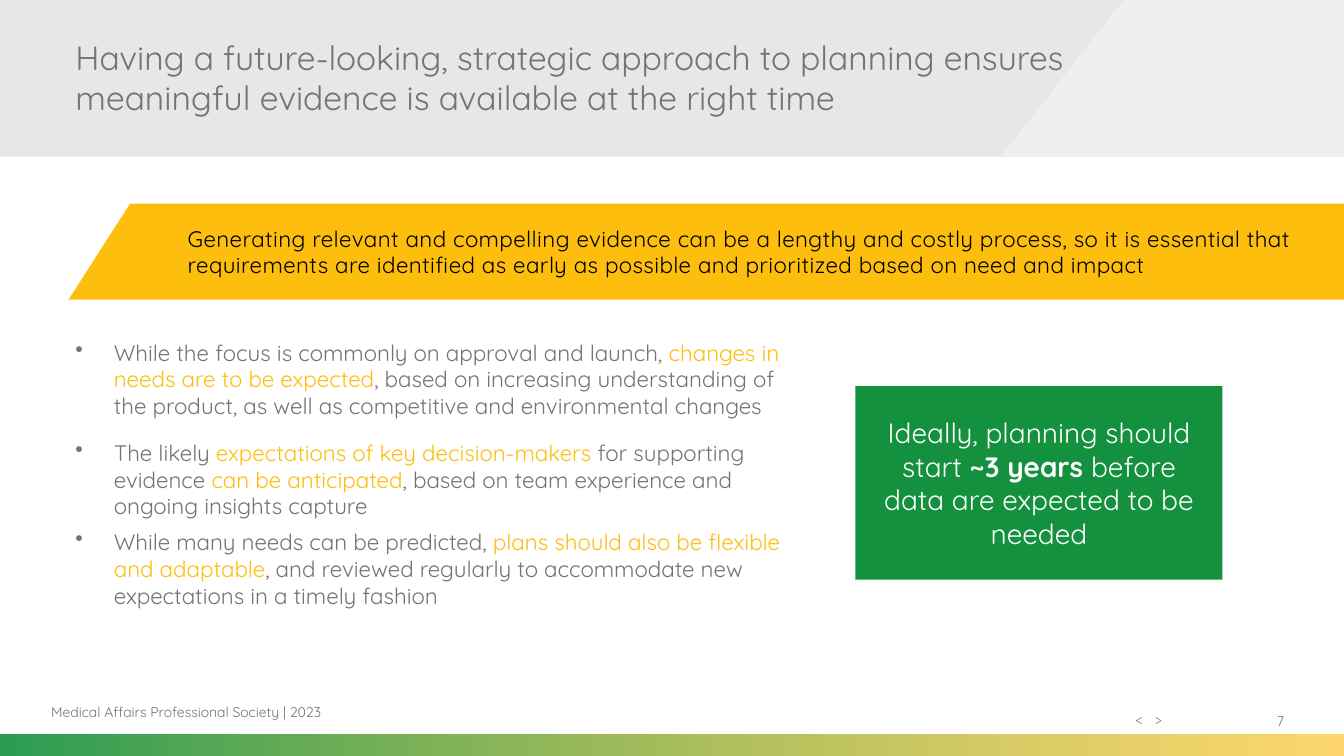
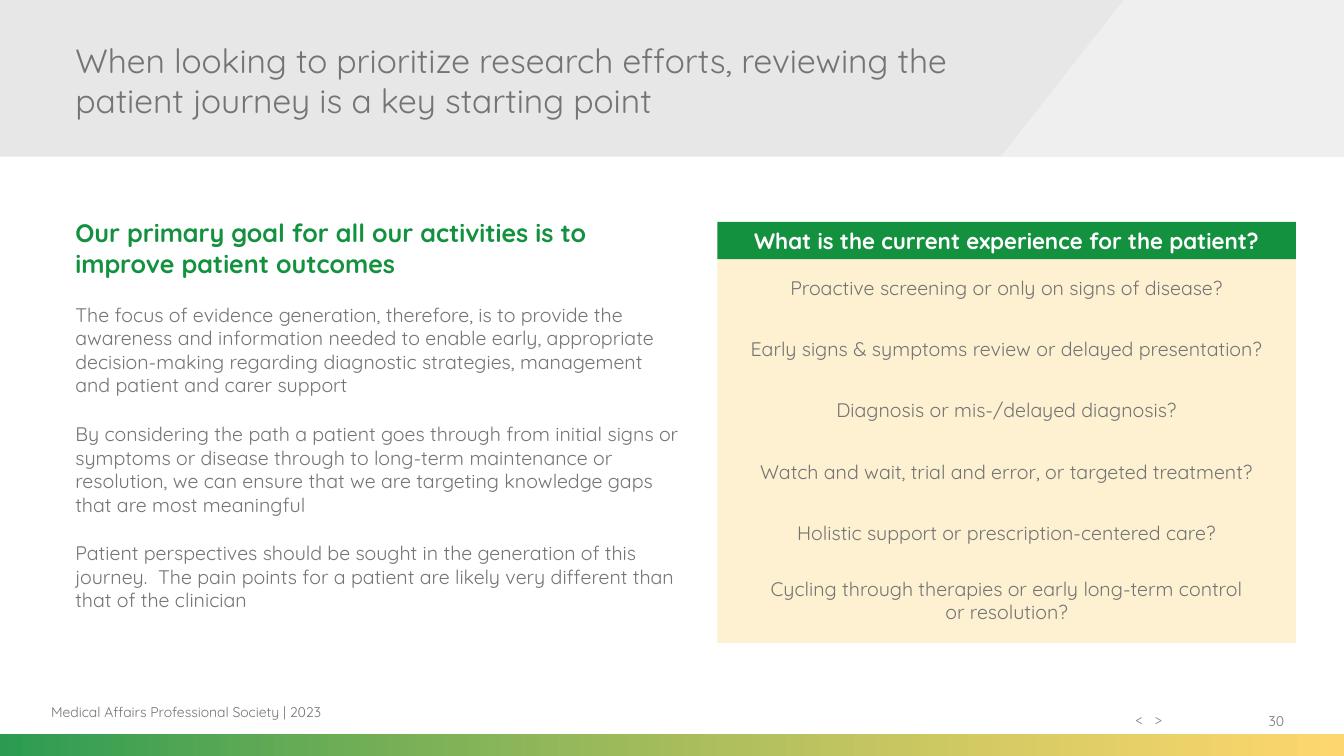
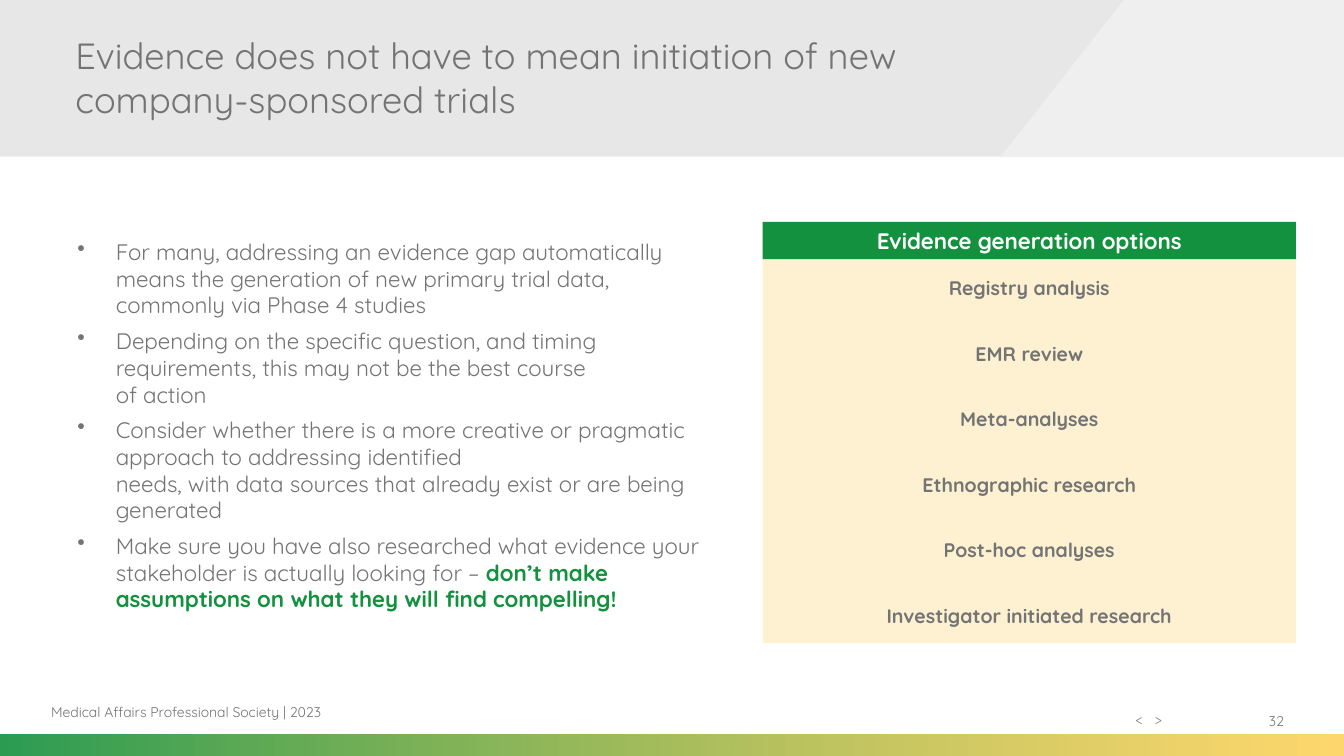
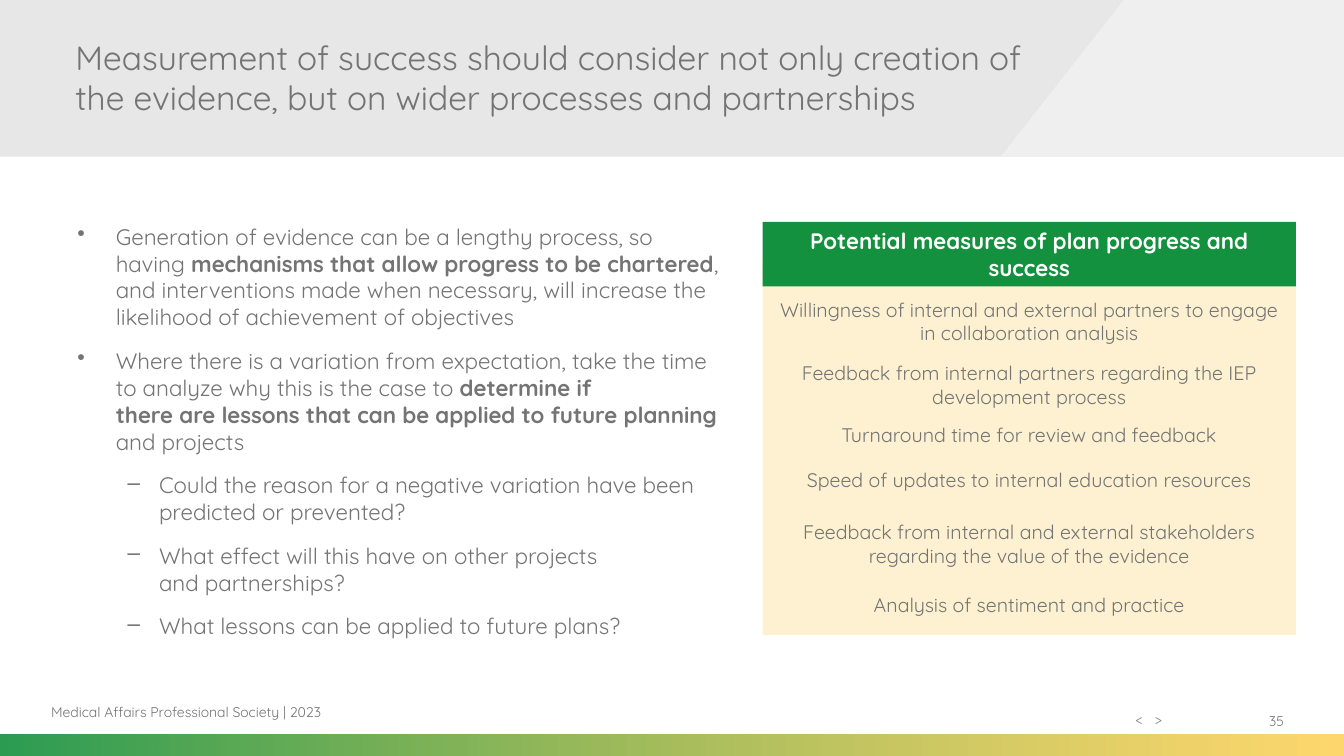
from copy import deepcopy
from dataclasses import dataclass
from typing import NamedTuple

from lxml.etree import SubElement
from pptx import Presentation
from pptx.dml.color import RGBColor
from pptx.enum.shapes import MSO_SHAPE
from pptx.enum.text import MSO_ANCHOR, PP_ALIGN
from pptx.oxml.ns import qn
from pptx.util import Cm, Pt

FONT = "Quicksand"
WIDE, HIGH = 33.87, 19.05
GREY, GREEN, GOLD, CREAM = "747474", "13913F", "FEBE0D", "FDF1D1"
WHITE, BLACK = "FFFFFF", "000000"
OWNER = "Medical Affairs Professional Society | 2023"


class Box(NamedTuple):
    left: float
    top: float
    width: float
    height: float


class Run(NamedTuple):
    text: str
    color: str = GREY
    bold: bool = False
    track: int = 0


@dataclass
class Para:
    runs: list[Run]
    before: float = 0
    after: float = 0
    mark: str = ""
    margin: float = 0
    hang: float = 0
    tab: float = 0


@dataclass
class Panel:
    left: float
    width: float
    head: str
    deep: float
    floor: float
    items: list[str]
    tops: list[float]
    bold: bool = False


def tint(color: str) -> RGBColor:
    return RGBColor.from_string(color)


def bullet(*runs: Run, after: float = 0) -> Para:
    return Para(list(runs), 6, after, "•", 0.97, 0.97)


def dash(text: str) -> Para:
    return Para([Run(text)], 6, 6, "–", 2.06, 0.79)


def plain(text: str, color: str = GREY, bold: bool = False) -> Para:
    return Para([Run(text, color, bold)])


def fade(shape, *rates: int) -> None:
    colors = list(shape._element.spPr.iter(qn("a:srgbClr")))
    for color, rate in zip(colors, rates):
        SubElement(color, qn("a:alpha"), val=str(rate * 1000))


def dress(shape, color: str):
    shape.shadow.inherit = False
    shape.line.fill.background()
    shape.fill.solid()
    shape.fill.fore_color.rgb = tint(color)
    return shape


def block(slide, box: Box, color: str):
    shape = slide.shapes.add_shape(MSO_SHAPE.RECTANGLE, *map(Cm, box))
    return dress(shape, color)


def shard(slide, dots: list[tuple[float, float]], color: str):
    first, *rest = [(Cm(x), Cm(y)) for x, y in dots]
    build = slide.shapes.build_freeform(*first)
    build.add_line_segments(rest)
    return dress(build.convert_to_shape(), color)


def add_run(line, run: Run, size: float) -> None:
    for index, part in enumerate(run.text.split("\n")):
        if index:
            line.add_line_break()
            line._p[-1].append(deepcopy(line.runs[-1]._r.rPr))
        piece = line.add_run()
        piece.text = part
        font = piece.font
        font.name, font.size, font.bold = FONT, Pt(size), run.bold
        font.color.rgb = tint(run.color)
        if run.track:
            piece._r.rPr.set("spc", str(run.track))


def write(shape, paras: list[Para], size: float, align=PP_ALIGN.LEFT,
          anchor=MSO_ANCHOR.MIDDLE) -> None:
    frame = shape.text_frame
    frame.word_wrap = True
    frame.vertical_anchor = anchor
    for index, para in enumerate(paras):
        line = frame.add_paragraph() if index else frame.paragraphs[0]
        line.alignment = align
        props = line._p.get_or_add_pPr()
        if para.mark:
            props.set("marL", str(Cm(para.margin)))
            props.set("indent", str(-Cm(para.hang)))
            SubElement(props, qn("a:buChar"), char=para.mark)
        if para.tab:
            tabs = SubElement(props, qn("a:tabLst"))
            SubElement(tabs, qn("a:tab"), pos=str(Cm(para.tab)), algn="l")
        line.space_before = Pt(para.before if index else 0)
        line.space_after = Pt(para.after)
        for run in para.runs:
            add_run(line, run, size)


def label(slide, box: Box, paras: list[Para], size: float,
          align=PP_ALIGN.LEFT, anchor=MSO_ANCHOR.MIDDLE) -> None:
    write(slide.shapes.add_textbox(*map(Cm, box)), paras, size, align, anchor)


def body(slide, box: Box, paras: list[Para], size: float = 16) -> None:
    label(slide, box, paras, size, anchor=MSO_ANCHOR.TOP)


def start(deck, title: str, page: int, size: float = 24, top: float = 0):
    slide = deck.slides.add_slide(deck.slide_layouts[6])
    fade(block(slide, Box(0, 0, WIDE, 3.95), "D9D9D9"), 62)
    slant = [(28.32, 0), (WIDE, 0), (WIDE, 3.95), (25.22, 3.95)]
    fade(shard(slide, slant, "F2F2F2"), 79)
    strip = block(slide, Box(0, 18.51, WIDE, HIGH - 18.51), GREEN)
    strip.fill.gradient()
    strip.fill.gradient_angle = 0
    for stop, color in zip(strip.fill.gradient_stops, (GREEN, GOLD)):
        stop.color.rgb = tint(color)
    fade(strip, 90, 60)
    label(slide, Box(30.3, 17.65, 2.31, 1.02), [plain(str(page))], 10, PP_ALIGN.RIGHT)
    arrows = Para([Run("<\t>", "808080")], tab=0.48)
    label(slide, Box(28.37, 17.78, 1.78, 0.69), [arrows], 10)
    label(slide, Box(1.04, 17.42, 10.72, 1.02), [plain(OWNER)], 10)
    label(slide, Box(1.65, top, 25.4, 3.89), [plain(title)], size)
    return slide


def draw(slide, panel: Panel) -> None:
    left, width = panel.left, panel.width
    block(slide, Box(left, 6.5, width, panel.floor - 6.5), CREAM)
    head = block(slide, Box(left, 5.59, width, panel.deep), GREEN)
    write(head, [plain(panel.head, WHITE, True)], 16, PP_ALIGN.CENTER)
    for item, top in zip(panel.items, panel.tops):
        line = plain(item, bold=panel.bold)
        label(slide, Box(left, top, width, 1.45), [line], 14, PP_ALIGN.CENTER)


def plan(deck) -> None:
    slide = start(deck, "Having a future-looking, strategic approach to planning ensures "
                  "meaningful evidence is available at the right time", 7)
    body(slide, Box(1.65, 8.41, 18.62, 7.82), [
        bullet(Run("While the focus is commonly on approval and launch, "),
               Run("changes in needs are to be expected", GOLD),
               Run(", based on increasing understanding of the product, as well as "
                   "competitive and environmental changes"), after=8),
        bullet(Run("The likely "),
               Run("expectations of key decision-makers ", GOLD),
               Run("for supporting evidence "),
               Run("can be anticipated", GOLD),
               Run(", based on team experience and ongoing insights capture")),
        bullet(Run("While many needs can be predicted, "),
               Run("plans should also be flexible and adaptable", GOLD),
               Run(", and reviewed regularly to accommodate new expectations in a "
                   "timely fashion"), after=8),
    ])
    card = block(slide, Box(21.56, 9.73, 9.25, 4.88), GREEN)
    card.text_frame.margin_left = card.text_frame.margin_right = Cm(0.41)
    write(card, [Para([Run("Ideally, planning should start ", WHITE),
                       Run("~3 years ", WHITE, True),
                       Run("before data are expected to be needed", WHITE)])],
          20, PP_ALIGN.CENTER)
    edge = [(3.28, 5.13), (WIDE, 5.13), (WIDE, 7.55), (1.73, 7.55)]
    banner = shard(slide, edge, GOLD)
    banner.text_frame.margin_left = Cm(3)
    write(banner, [Para([Run(
        "Generating relevant and compelling evidence can be a lengthy and costly process, "
        "so it is essential that requirements are identified as early as possible and "
        "prioritized based on need and impact", BLACK, track=30)])], 16)


def journey(deck) -> None:
    slide = start(deck, "When looking to prioritize research efforts, reviewing the patient "
                  "journey is a key starting point", 30, top=0.08)
    goal = "Our primary goal for all our activities is to improve patient outcomes"
    box = Box(1.65, 5.36, 15.75, 1.85)
    body(slide, box, [plain(goal, GREEN, True)], 18)
    texts = [
        "The focus of evidence generation, therefore, is to provide the awareness and "
        "information needed to enable early, appropriate decision-making regarding "
        "diagnostic strategies, management and patient and carer support",
        "By considering the path a patient goes through from initial signs or symptoms or "
        "disease through to long-term maintenance or resolution, we can ensure that we are "
        "targeting knowledge gaps that are most meaningful",
        "Patient perspectives should be sought in the generation of this journey.  The pain "
        "points for a patient are likely very different than that of the clinician",
    ]
    body(slide, box._replace(top=7.5, height=8.9),
         [Para([Run(text)], 12, 6) for text in texts], 14)
    draw(slide, Panel(
        18.08, 14.58, "What is the current experience for the patient?", 0.94, 16.2,
        ["Proactive screening or only on signs of disease?",
         "Early signs & symptoms review or delayed presentation?",
         "Diagnosis or mis-/delayed diagnosis?",
         "Watch and wait, trial and error, or targeted treatment?",
         "Holistic support or prescription-centered care?",
         "Cycling through therapies or early long-term control\nor resolution?"],
        [6.53 + 1.54 * row for row in range(5)] + [14.4]))


def options(deck) -> None:
    slide = start(deck, "Evidence does not have to mean initiation of new "
                  "company-sponsored trials", 32, 26)
    body(slide, Box(1.7, 5.87, 16.38, 10.11), [
        bullet(Run("For many, addressing an evidence gap automatically means the generation "
                   "of new primary trial data, commonly via Phase 4 studies")),
        bullet(Run("Depending on the specific question, and timing requirements, this may "
                   "not be the best course\nof action")),
        bullet(Run("Consider whether there is a more creative or pragmatic approach to "
                   "addressing identified\nneeds, with data sources that already exist or "
                   "are being generated")),
        bullet(Run("Make sure you have also researched what evidence your stakeholder is "
                   "actually looking for – "),
               Run("don’t make assumptions on what they will find compelling!", GREEN, True)),
    ])
    draw(slide, Panel(
        19.22, 13.44, "Evidence generation options", 0.94, 16.2,
        ["Registry analysis", "EMR review", "Meta-analyses", "Ethnographic research",
         "Post-hoc analyses", "Investigator initiated research"],
        [6.53 + 1.65 * row for row in range(6)], True))


def success(deck) -> None:
    slide = start(deck, "Measurement of success should consider not only creation of the "
                  "evidence, but on wider processes and partnerships", 35)
    body(slide, Box(1.7, 5.49, 16.84, 11.71), [
        bullet(Run("Generation of evidence can be a lengthy process, so having "),
               Run("mechanisms that allow progress to be chartered", bold=True),
               Run(", and interventions made when necessary, will increase the likelihood "
                   "of achievement of objectives"), after=6),
        bullet(Run("Where there is a variation from expectation, take the time to analyze "
                   "why this is the case to "),
               Run("determine if\nthere are lessons that can be applied to future planning ",
                   bold=True),
               Run("and projects"), after=6),
        dash("Could the reason for a negative variation have been predicted or prevented?"),
        dash("What effect will this have on other projects\nand partnerships?"),
        dash("What lessons can be applied to future plans?"),
    ])
    draw(slide, Panel(
        19.22, 13.44, "Potential measures of plan progress and success", 1.63, 16,
        ["Willingness of internal and external partners to engage in collaboration analysis",
         "Feedback from internal partners regarding the IEP development process",
         "Turnaround time for review and feedback",
         "Speed of updates to internal education resources",
         "Feedback from internal and external stakeholders regarding the value of the evidence",
         "Analysis of sentiment and practice"],
        [7.37, 8.97, 10.24, 11.35, 12.98, 14.5]))


def main() -> None:
    deck = Presentation()
    deck.slide_width, deck.slide_height = Cm(WIDE), Cm(HIGH)
    for make in (plan, journey, options, success):
        make(deck)
    deck.save("out.pptx")


if __name__ == "__main__":
    main()
